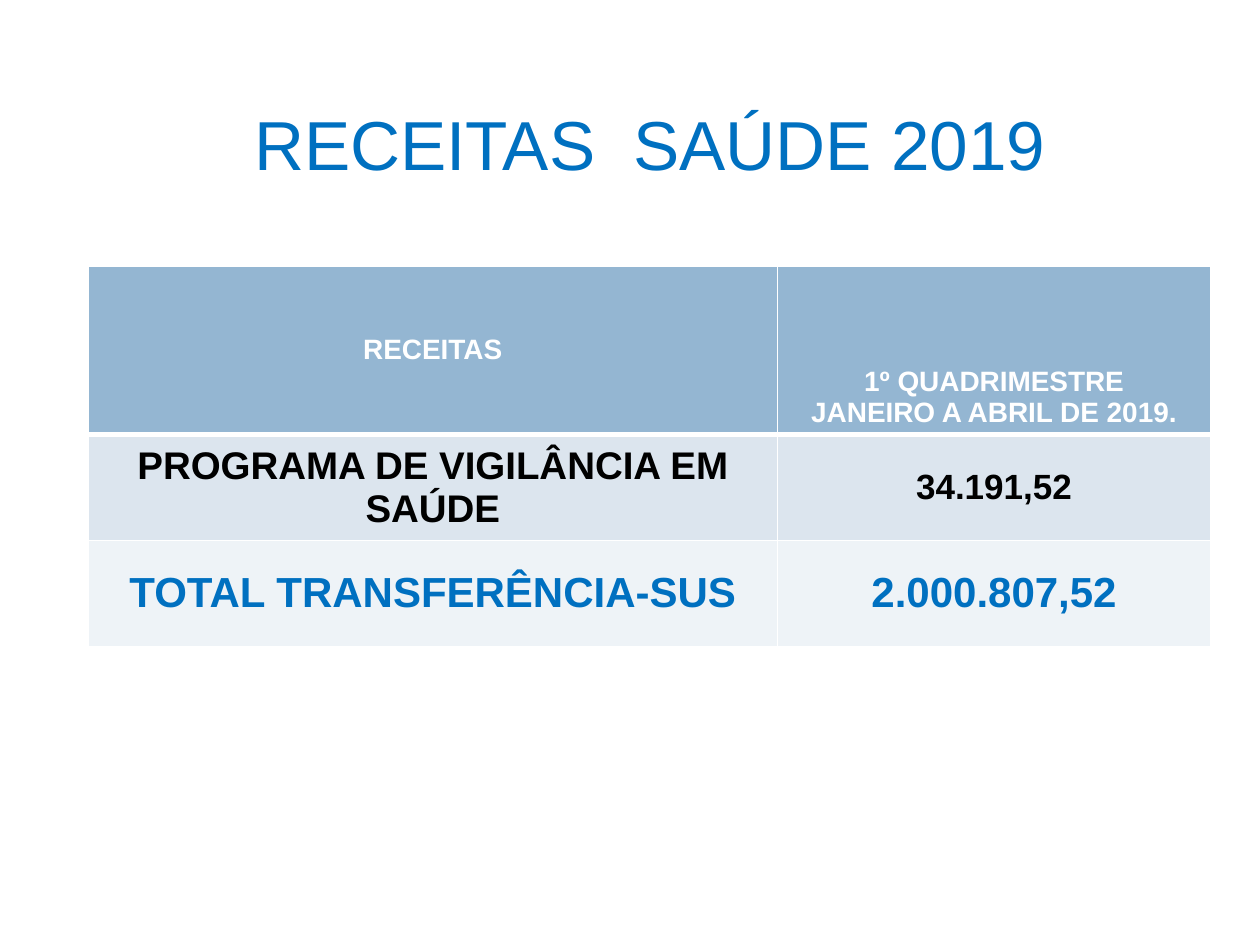
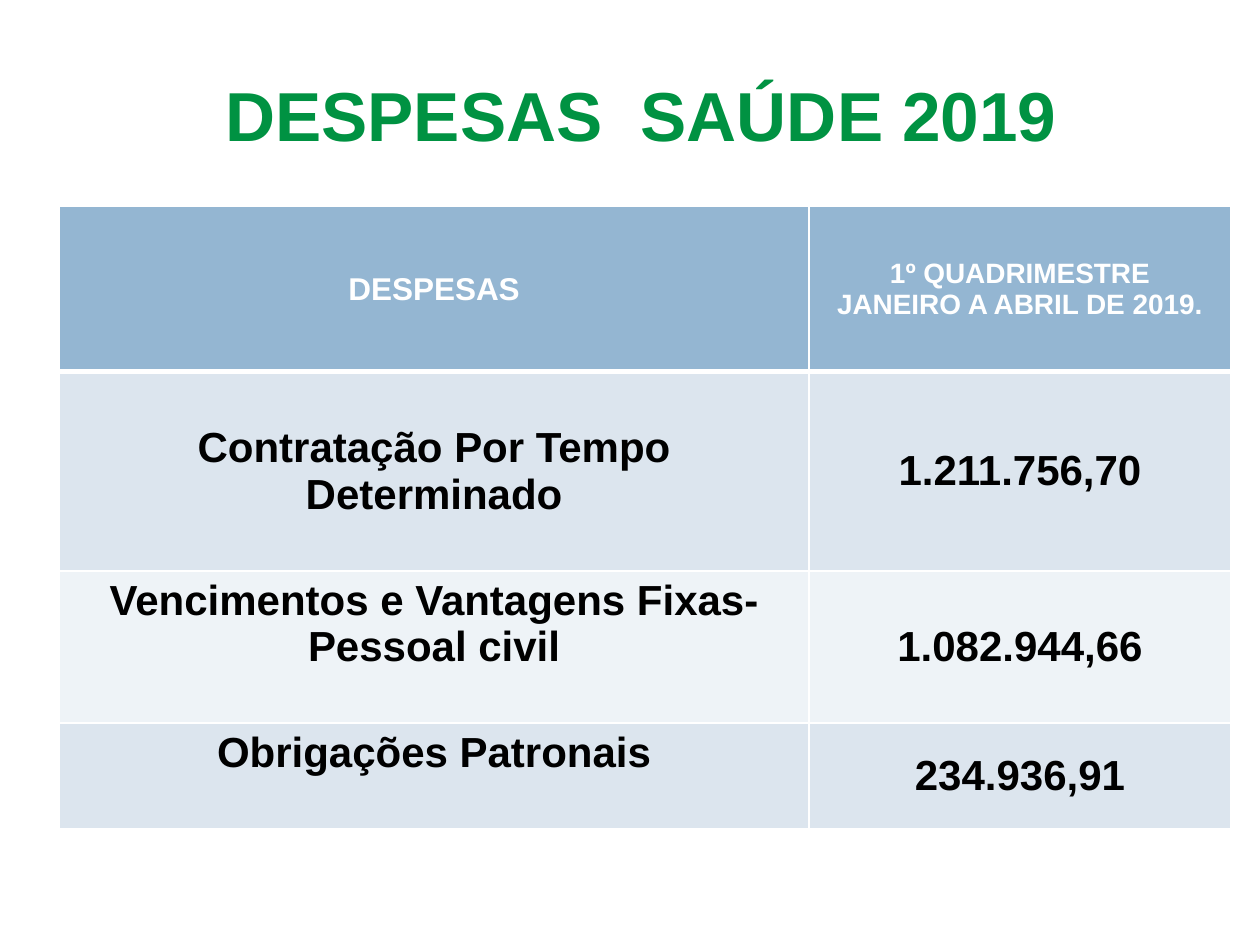
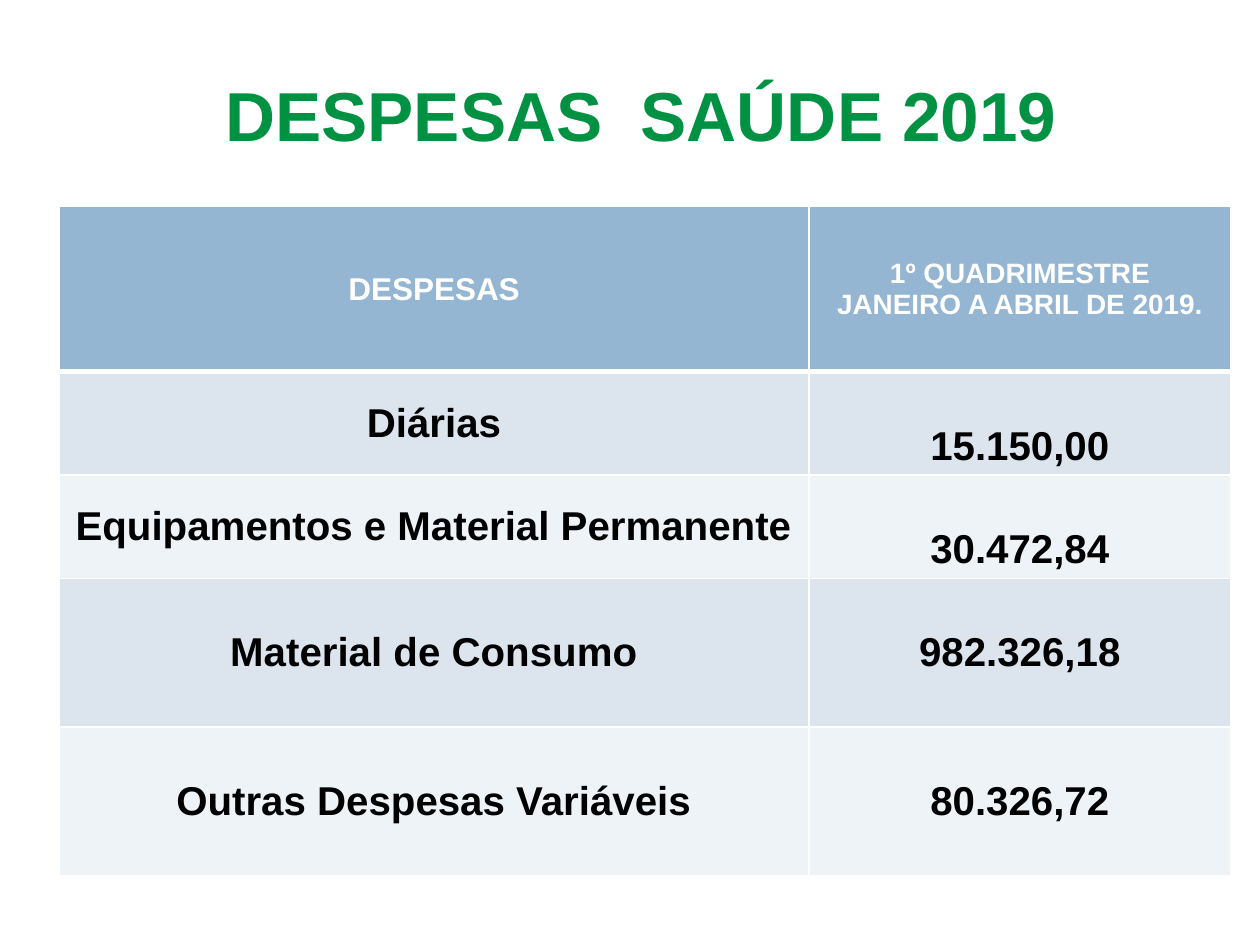
"""Build three slides of health revenue and expense tables."""
from dataclasses import dataclass

from lxml.etree import SubElement
from pptx import Presentation
from pptx.dml.color import RGBColor
from pptx.enum.text import MSO_ANCHOR, MSO_AUTO_SIZE, PP_ALIGN
from pptx.oxml.ns import qn
from pptx.util import Inches, Pt

FONT = "Arial"
WHITE = RGBColor(0xFF, 0xFF, 0xFF)
BLACK = RGBColor(0x00, 0x00, 0x00)
BLUE = RGBColor(0x00, 0x70, 0xC0)
GREEN = RGBColor(0x00, 0x92, 0x42)
HEAD = RGBColor(0x94, 0xB6, 0xD2)
BANDS = (RGBColor(0xEE, 0xF3, 0xF7), RGBColor(0xDC, 0xE5, 0xEE))
TOP, MIDDLE, BOTTOM = MSO_ANCHOR.TOP, MSO_ANCHOR.MIDDLE, MSO_ANCHOR.BOTTOM
THIN, THICK = Pt(1), Pt(3)
PERIOD = ("1º QUADRIMESTRE", "JANEIRO A ABRIL DE 2019.")


@dataclass(frozen=True)
class Entry:
    lines: tuple[str, ...]
    size: float
    color: RGBColor = BLACK
    anchor: MSO_ANCHOR = MIDDLE


@dataclass(frozen=True)
class Row:
    height: float
    label: Entry
    value: Entry


@dataclass(frozen=True)
class Title:
    text: str
    left: float
    top: float
    color: RGBColor
    bold: bool


@dataclass(frozen=True)
class Grid:
    left: float
    top: float
    widths: tuple[float, float]
    rows: tuple[Row, ...]


def header(height: float, name: str, size: float, anchor: MSO_ANCHOR = MIDDLE) -> Row:
    return Row(height, Entry((name,), size, WHITE), Entry(PERIOD, 16, WHITE, anchor))


def item(height: float, name: str, amount: str, size: float,
         label: MSO_ANCHOR = MIDDLE, value: MSO_ANCHOR = MIDDLE) -> Row:
    return Row(height, Entry((name,), size, anchor=label),
               Entry((amount,), size, anchor=value))


def costs(*rows: Row) -> Grid:
    return Grid(0.47, 1.64, (5.95, 3.35), (header(1.31, "DESPESAS", 18), *rows))


INCOME = Title("RECEITAS  SAÚDE 2019", 0.62, 0.78, BLUE, False)
SPENDING = Title("DESPESAS  SAÚDE 2019", 0.55, 0.55, GREEN, True)

SLIDES = (
    (INCOME, Grid(0.7, 2.11, (5.47, 3.44), (
        header(1.34, "RECEITAS", 16, BOTTOM),
        Row(0.84, Entry(("PROGRAMA DE VIGILÂNCIA EM SAÚDE",), 22),
            Entry(("34.191,52",), 20)),
        Row(0.84, Entry(("TOTAL TRANSFERÊNCIA-SUS",), 24, BLUE),
            Entry(("2.000.807,52",), 24, BLUE)),
    ))),
    (SPENDING, costs(
        item(1.58, "Contratação Por Tempo Determinado", "1.211.756,70", 24),
        item(1.21, "Vencimentos e Vantagens Fixas-Pessoal civil", "1.082.944,66", 24,
             label=TOP),
        item(0.84, "Obrigações Patronais", "234.936,91", 24, label=TOP),
    )),
    (SPENDING, costs(
        item(0.82, "Diárias", "15.150,00", 23, value=BOTTOM),
        item(0.82, "Equipamentos e Material Permanente", "30.472,84", 23, value=BOTTOM),
        item(1.18, "Material de Consumo", "982.326,18", 23),
        item(1.18, "Outras Despesas Variáveis", "80.326,72", 23),
    )),
)


def write(frame, lines: tuple[str, ...], size: float, color: RGBColor, bold: bool) -> None:
    for index, line in enumerate(lines):
        para = frame.add_paragraph() if index else frame.paragraphs[0]
        para.alignment = PP_ALIGN.CENTER
        run = para.add_run()
        run.text = line
        run.font.name = FONT
        run.font.size = Pt(size)
        run.font.bold = bold
        run.font.color.rgb = color


def border(cell, level: int) -> None:
    props = cell._tc.get_or_add_tcPr()
    widths = {"L": THIN, "R": THIN, "T": THICK if level == 1 else THIN,
              "B": THICK if level == 0 else THIN}
    for side, width in widths.items():
        line = SubElement(props, qn(f"a:ln{side}"), w=str(width))
        fill = SubElement(line, qn("a:solidFill"))
        SubElement(fill, qn("a:srgbClr"), val=str(WHITE))


def draw_cell(cell, entry: Entry, level: int) -> None:
    border(cell, level)
    cell.fill.solid()
    cell.fill.fore_color.rgb = BANDS[level % 2] if level else HEAD
    cell.vertical_anchor = entry.anchor
    write(cell.text_frame, entry.lines, entry.size, entry.color, True)


def draw_title(slide, title: Title) -> None:
    shape = slide.shapes.title
    shape.left, shape.top = Inches(title.left), Inches(title.top)
    shape.width, shape.height = Inches(9.08), Inches(0.71)
    frame = shape.text_frame
    frame.auto_size = MSO_AUTO_SIZE.NONE
    frame.vertical_anchor = MIDDLE
    write(frame, (title.text,), 39.6, title.color, title.bold)


def draw_grid(slide, grid: Grid) -> None:
    table = slide.shapes.add_table(
        len(grid.rows), len(grid.widths), Inches(grid.left), Inches(grid.top),
        Inches(sum(grid.widths)), Inches(sum(row.height for row in grid.rows))).table
    for column, width in zip(table.columns, grid.widths):
        column.width = Inches(width)
    for level, row in enumerate(grid.rows):
        table.rows[level].height = Inches(row.height)
        for place, entry in enumerate((row.label, row.value)):
            draw_cell(table.cell(level, place), entry, level)


def main() -> None:
    deck = Presentation()
    deck.slide_width, deck.slide_height = Inches(10), Inches(7.5)
    for title, grid in SLIDES:
        slide = deck.slides.add_slide(deck.slide_layouts[5])
        draw_title(slide, title)
        draw_grid(slide, grid)
    deck.save("out.pptx")


if __name__ == "__main__":
    main()
